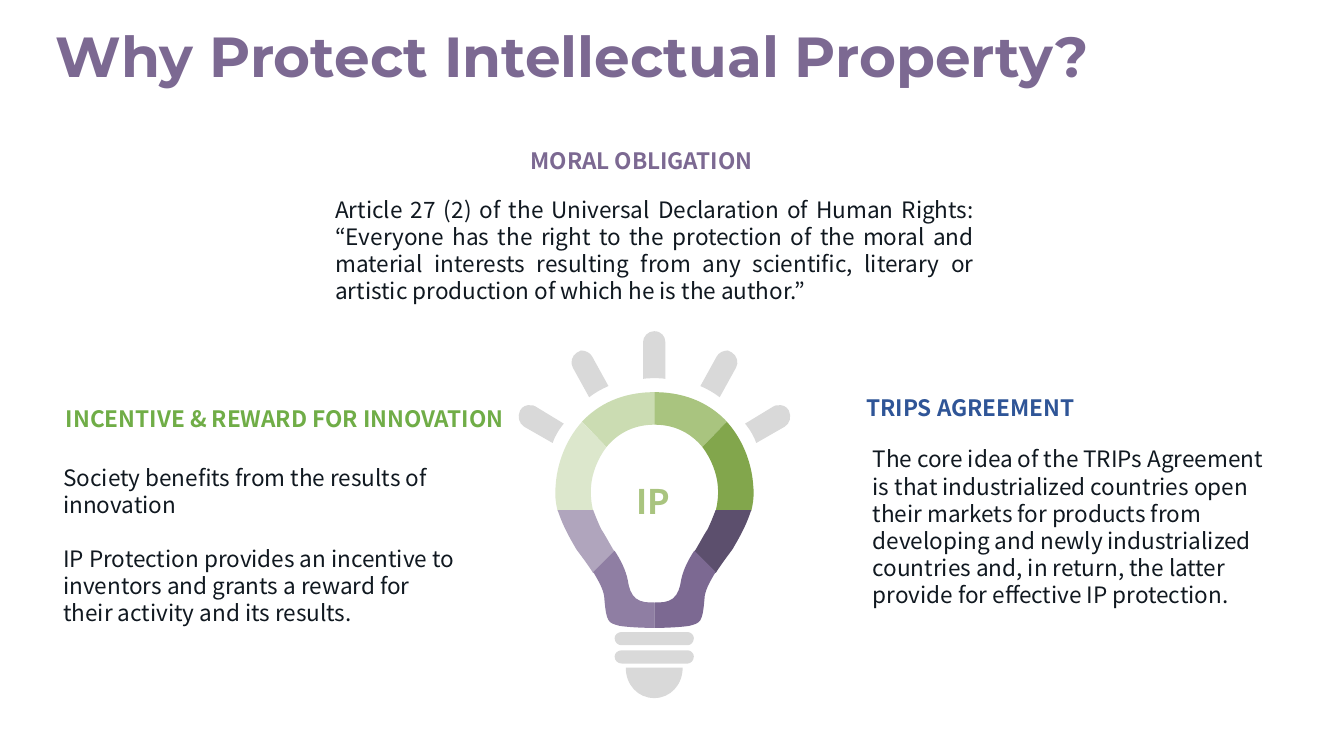
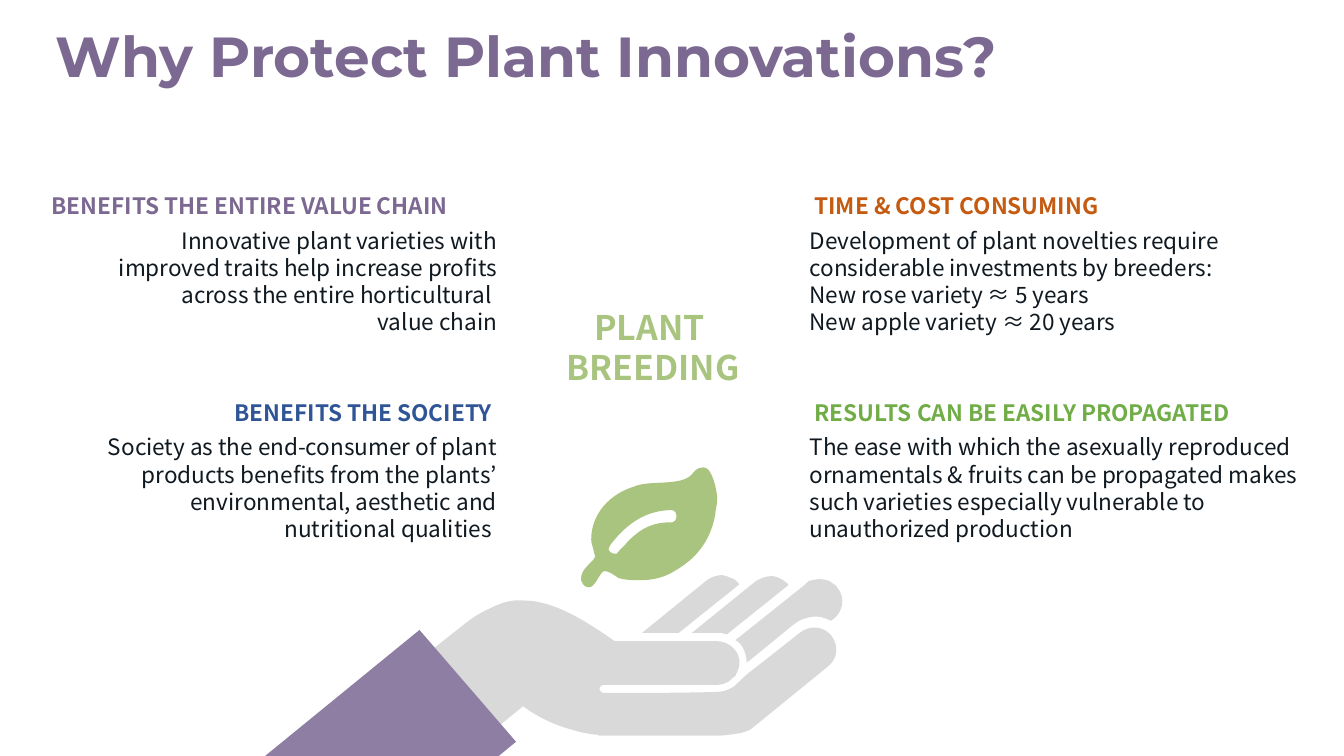
from lxml import etree
from pptx import Presentation
from pptx.dml.color import RGBColor
from pptx.enum.text import MSO_ANCHOR as Anchor, PP_ALIGN as Align
from pptx.oxml.ns import qn
from pptx.util import Emu, Inches, Pt

COLORS = {
    "purple": "7C6992", "ink": "101820", "blue": "2F5597", "green": "70AD47",
    "orange": "C55A11", "lime": "A9C47F", "gray": "D9D9D9", "leaf": "A8C47F",
    "lilac": "8F7EA3", "pale lime": "CBDCB2", "mist": "DCE7CC", "moss": "82A64C",
    "pale lilac": "B0A5BD", "plum": "5C4F6D",
}
TITLE_FONT, BODY_FONT = "Montserrat", "Noto Sans CJK KR"
POINT = Inches(0.01)  # unit of the drawn outlines
BULB_AXIS = 644.25
HEADING_HEIGHT, BODY_HEIGHT = 4.97, 15.19

presentation = Presentation()
presentation.slide_width, presentation.slide_height = Inches(13.23), Inches(7.44)
COLUMN = presentation.slide_width / 100
ROW = presentation.slide_height / 100
title_layout = presentation.slide_layouts[5]


def add_text(slide, box, paragraphs, color="ink", size=16, bold=False,
             align=Align.LEFT, gap=0):
    """Add a text box; box is left, top, width, height in percent of the slide.

    Bold text is a heading: centred vertically, with wider margins.
    """
    left, top, width, height = box
    shape = slide.shapes.add_textbox(Emu(round(left * COLUMN)), Emu(round(top * ROW)),
                                     Emu(round(width * COLUMN)), Emu(round(height * ROW)))
    frame = shape.text_frame
    frame.word_wrap = True
    frame.vertical_anchor = Anchor.MIDDLE if bold else Anchor.TOP
    frame.margin_left = frame.margin_right = Inches(0.1 if bold else 0.05)
    frame.margin_top = frame.margin_bottom = Inches(0.05 if bold else 0.02)
    for index, text in enumerate(paragraphs):
        paragraph = frame.add_paragraph() if index else frame.paragraphs[0]
        paragraph.alignment = align
        if index and gap:
            paragraph.space_before = Pt(gap)
        for part, line in enumerate(text.split("\n")):
            if part:
                paragraph.add_line_break()
            run = paragraph.add_run()
            run.text = line
            run.font.name, run.font.size, run.font.bold = BODY_FONT, Pt(size), bold
            run.font.color.rgb = RGBColor.from_string(COLORS[color])


def add_outline(shapes, contours, color):
    """Draw closed contours; a step of two numbers is a line, of six a Bezier curve."""
    ends = [[(step[-2] * POINT, step[-1] * POINT) for step in contour] for contour in contours]
    builder = shapes.build_freeform(*ends[0][0], scale=1.0)
    for index, points in enumerate(ends):
        if index:
            builder.move_to(*points[0])
        builder.add_line_segments(points[1:], close=False)
    shape = builder.convert_to_shape()
    outline = next(shape._element.iter(qn("a:path")))
    segments = iter(list(outline))
    for contour in contours:
        for step in contour:
            segment = next(segments)
            if len(step) == 6:
                curve = etree.Element(qn("a:cubicBezTo"))
                for x, y in zip(step[::2], step[1::2]):
                    etree.SubElement(curve, qn("a:pt"), x=str(round(x * POINT) - shape.left),
                                     y=str(round(y * POINT) - shape.top))
                outline.replace(segment, curve)
                segment = curve
        segment.addnext(etree.Element(qn("a:close")))
    shape.shadow.inherit = False
    shape.fill.solid()
    shape.fill.fore_color.rgb = RGBColor.from_string(COLORS[color])
    shape.line.fill.background()


slides = []
for text in ("Why Protect Intellectual Property?", "Why Protect Plant Innovations?"):
    slide = presentation.slides.add_slide(title_layout)
    title = slide.shapes.title
    title.left, title.top = round(4.16 * COLUMN), round(3.76 * ROW)
    title.width, title.height = round(80.05 * COLUMN), round(8.2 * ROW)
    frame = title.text_frame
    frame.word_wrap = True
    frame.vertical_anchor = Anchor.MIDDLE
    frame.margin_left = frame.margin_right = frame.margin_top = frame.margin_bottom = 0
    paragraph = frame.paragraphs[0]
    paragraph.alignment = Align.LEFT
    paragraph.line_spacing = 0.9
    run = paragraph.add_run()
    run.text = text
    run.font.name, run.font.size, run.font.bold = TITLE_FONT, Pt(40), True
    run.font.color.rgb = RGBColor.from_string(COLORS["purple"])
    slides.append(slide)
property_slide, plant_slide = slides

# Intellectual property: three reasons around a light bulb
for box, text, color, align in (
    ((63.72, 51.48, 36, HEADING_HEIGHT), "TRIPS AGREEMENT", "blue", Align.LEFT),
    ((32.65, 18.68, 30.16, HEADING_HEIGHT), "MORAL OBLIGATION", "purple", Align.CENTER),
    ((4.16, 52.9, 34.47, HEADING_HEIGHT), "INCENTIVE & REWARD FOR INNOVATION", "green", Align.LEFT),
):
    add_text(property_slide, box, [text], color, bold=True, align=align)

add_text(property_slide, (64.56, 58.65, 31.22, 25.94), [
    "The core idea of the TRIPs Agreement is that industrialized countries open their "
    "markets for products from developing and newly industrialized countries and, in "
    "return, the latter provide for effective IP protection."])
add_text(property_slide, (24.57, 25.67, 48.3, BODY_HEIGHT), [
    "Article 27 (2) of the Universal Declaration of Human Rights: “Everyone has the right "
    "to the protection of the moral and material interests resulting from any scientific, "
    "literary or artistic production of which he is the author.”"], align=Align.JUSTIFY)
add_text(property_slide, (4.34, 61.06, 30.39, 22.45), [
    "Society benefits from the results of innovation",
    "IP Protection provides an incentive to inventors and grants a reward for their "
    "activity and its results."], gap=19)
add_text(property_slide, (35.68, 62.9, 25.85, 6.72), ["IP"], "lime", 24, True, Align.CENTER)

bulb = property_slide.shapes.add_group_shape().shapes
bulb_base = [
    [(612, top), (608, top, 605, top + 3, 605, top + 6),
     (605, top + 10, 608, top + 13, 612, top + 13), (677, top + 13),
     (680, top + 13, 683, top + 10, 683, top + 6), (683, top + 3, 680, top, 677, top)]
    for top in (622, 640)]
bulb_base.append([(616, 657), (616, 674, 628, 687, 644, 687), (660, 687, 672, 674, 672, 657)])
add_outline(bulb, bulb_base, "gray")

rays = [[(644, 326), (651, 326, 655, 331, 655, 337), (655, 373), (653, 372, 636, 372, 633, 373),
         (633, 337), (633, 331, 638, 326, 644, 326)]]
# Left half of the bulb, each part with its left and right colour
for left_color, right_color, contour in (
    ("gray", "gray", [
        (523, 399), (524, 399, 526, 399, 527, 400), (555, 417), (550, 423, 546, 430, 544, 436),
        (516, 420), (511, 417, 509, 410, 512, 404), (514, 400, 519, 398, 523, 399)]),
    ("gray", "gray", [
        (572, 345), (576, 345, 581, 347, 583, 351), (599, 380), (592, 383, 585, 387, 580, 391),
        (564, 362), (561, 357, 563, 350, 568, 347), (569, 346, 571, 346, 572, 345)]),
    ("pale lime", "lime", [
        (BULB_AXIS, 386), (BULB_AXIS, 418), (622, 418, 607, 428, 597, 440), (573, 415),
        (588, 399, 611, 386, BULB_AXIS, 386)]),
    ("mist", "moss", [
        (573, 415), (597, 440), (588, 452, 583, 466, 582, 477), (581, 486, 582, 495, 584, 503),
        (549, 503), (547, 495, 546, 487, 547, 478), (548, 460, 555, 435, 573, 415)]),
    ("pale lilac", "plum", [
        (549, 502), (555, 521, 565, 536, 567, 540), (569, 543, 577, 553, 584, 564), (605, 543),
        (600, 535, 596, 527, 592, 521), (590, 517, 587, 510, 584, 502)]),
    ("lilac", "purple", [
        (605, 542), (584, 563), (590, 573, 595, 582, 595, 590), (597, 613, 599, 613, 610, 616),
        (616, 617, 630, 618, BULB_AXIS, 618), (BULB_AXIS, 593), (638, 593, 631, 593, 626, 589),
        (621, 585, 619, 578, 618, 571), (616, 561, 611, 551, 605, 542)]),
):
    mirrored = [tuple(value if index % 2 else 2 * BULB_AXIS - value
                      for index, value in enumerate(step)) for step in contour]
    if left_color == "gray":
        rays += [contour, mirrored]
    else:
        add_outline(bulb, [contour], left_color)
        add_outline(bulb, [mirrored], right_color)
add_outline(bulb, rays, "gray")

# Plant innovations: two rows of two reasons around a hand with a leaf
LEFT_HEADING, LEFT_BODY, RIGHT = (3.1, 34.24), (6.45, 30.91), (59.86, 37.57)
FIRST_ROW, ROW_STEP, BODY_OFFSET = 24.73, 27.3, 5.03
for row, heading_span, body_span, heading, color, heading_align, body_align, body in (
    (0, RIGHT, RIGHT, "TIME & COST CONSUMING", "orange", Align.LEFT, Align.LEFT, [
        "Development of plant novelties require considerable investments by breeders:",
        "New rose variety ≈ 5 years",
        "New apple variety ≈ 20 years"]),
    (1, RIGHT, RIGHT, "RESULTS CAN BE EASILY PROPAGATED", "green", Align.LEFT, Align.LEFT, [
        "The ease with which the asexually reproduced ornamentals & fruits can be propagated "
        "makes such varieties especially vulnerable to unauthorized production"]),
    (0, LEFT_HEADING, LEFT_BODY, "BENEFITS THE ENTIRE VALUE CHAIN", "purple",
     Align.LEFT, Align.RIGHT, [
        "Innovative plant varieties with improved traits help increase profits across the "
        "entire horticultural \nvalue chain"]),
    (1, LEFT_HEADING, LEFT_BODY, "BENEFITS THE SOCIETY", "blue", Align.RIGHT, Align.RIGHT, [
        "Society as the end-consumer of plant products benefits from the plants’ "
        "environmental, aesthetic and nutritional qualities "]),
):
    top = FIRST_ROW + row * ROW_STEP
    add_text(plant_slide, (heading_span[0], top, heading_span[1], HEADING_HEIGHT), [heading],
             color, bold=True, align=heading_align)
    add_text(plant_slide, (body_span[0], top + BODY_OFFSET, body_span[1], BODY_HEIGHT), body,
             align=body_align)

palm = [
    (515, 591), (540, 591, 567, 604, 605, 631), (705, 631), (712, 631, 719, 634, 723, 639),
    (726, 642, 728, 647, 728, 652), (728, 657, 726, 661, 724, 665),
    (722, 667, 719, 669, 717, 671), (713, 673, 710, 674, 706, 674), (594, 674),
    (592, 674, 590, 676, 590, 678), (590, 680, 592, 681, 594, 682),
    (595, 682, 596, 682, 597, 682), (633, 682, 669, 682, 706, 681),
    (707, 681, 714, 681, 722, 676), (727, 672, 734, 664, 740, 660),
    (762, 643, 787, 623, 787, 623), (797, 615, 810, 616, 818, 625),
    (826, 635, 825, 648, 815, 656), (740, 717), (735, 721, 726, 722, 719, 723),
    (712, 724, 706, 724, 706, 724), (592, 724), (592, 724, 591, 724, 590, 724),
    (589, 724, 589, 724, 588, 723), (582, 723, 572, 721, 559, 717),
    (546, 713, 531, 707, 515, 695), (455, 744), (393, 744), (341, 707),
    (377, 678, 413, 649, 450, 620), (461, 611, 470, 604, 484, 598),
    (494, 593, 504, 590, 515, 591)]
index_finger = [
    (807, 570), (810, 570, 814, 571, 817, 572), (818, 573, 819, 574, 821, 575),
    (822, 575, 823, 576, 824, 578), (833, 588, 830, 604, 818, 611),
    (812, 608, 806, 606, 800, 607), (793, 608, 787, 610, 782, 614), (738, 650), (735, 652),
    (735, 645, 733, 639, 729, 634), (727, 632, 726, 631, 724, 630), (793, 575),
    (794, 574, 795, 573, 796, 572), (799, 571, 803, 570, 807, 570)]
middle_finger = [
    (760, 567), (763, 567, 766, 568, 769, 570), (770, 570, 771, 571, 772, 572),
    (774, 573, 775, 574, 776, 575), (776, 575, 776, 575, 776, 576), (716, 624),
    (714, 624, 712, 624, 711, 623), (709, 623, 707, 623, 706, 623), (681, 623), (744, 572),
    (749, 569, 754, 567, 760, 567)]
ring_finger = [
    (711, 566), (714, 567, 717, 567, 720, 569), (721, 569, 723, 570, 724, 571),
    (725, 572, 726, 573, 727, 574), (727, 574, 727, 575, 728, 575), (668, 623),
    (667, 623, 658, 623, 650, 623), (641, 623, 632, 623, 632, 623), (696, 571),
    (700, 568, 706, 566, 711, 566)]
sleeve = [(413, 620), (508, 730), (491, 744), (261, 744)]
leaf_edge = [
    (704, 507), (699, 533, 685, 550, 664, 562), (653, 569, 641, 571, 630, 571),
    (624, 571, 616, 571, 609, 569), (605, 566, 599, 562, 595, 562),
    (591, 562, 586, 578, 580, 578), (576, 578, 574, 576, 572, 571),
    (572, 571, 572, 569, 572, 569), (572, 559, 586, 552, 586, 547),
    (586, 547, 584, 543, 584, 540), (584, 538, 582, 536, 582, 531),
    (582, 505, 601, 486, 624, 479), (639, 472, 670, 479, 681, 467),
    (685, 462, 687, 460, 693, 460), (701, 460, 706, 483, 706, 491),
    (706, 498, 704, 502, 704, 507)]
leaf_vein = [
    (662, 502), (637, 502, 618, 514, 601, 536), (601, 538, 599, 538, 599, 540),
    (599, 543, 603, 545, 605, 545), (605, 545, 607, 545, 607, 545),
    (611, 540, 616, 536, 618, 533), (632, 519, 643, 514, 662, 514),
    (664, 514, 666, 512, 666, 507), (666, 505, 664, 502, 662, 502)]
hand = plant_slide.shapes.add_group_shape().shapes
for contours, color in (
    ([palm, index_finger, middle_finger, ring_finger], "gray"),
    ([sleeve], "lilac"),
    ([leaf_edge, leaf_vein], "leaf"),
):
    add_outline(hand, contours, color)
add_text(plant_slide, (35.68, 39.78, 25.85, 12.23), ["PLANT ", "BREEDING"],
         "lime", 24, True, Align.CENTER)

presentation.save("out.pptx")
